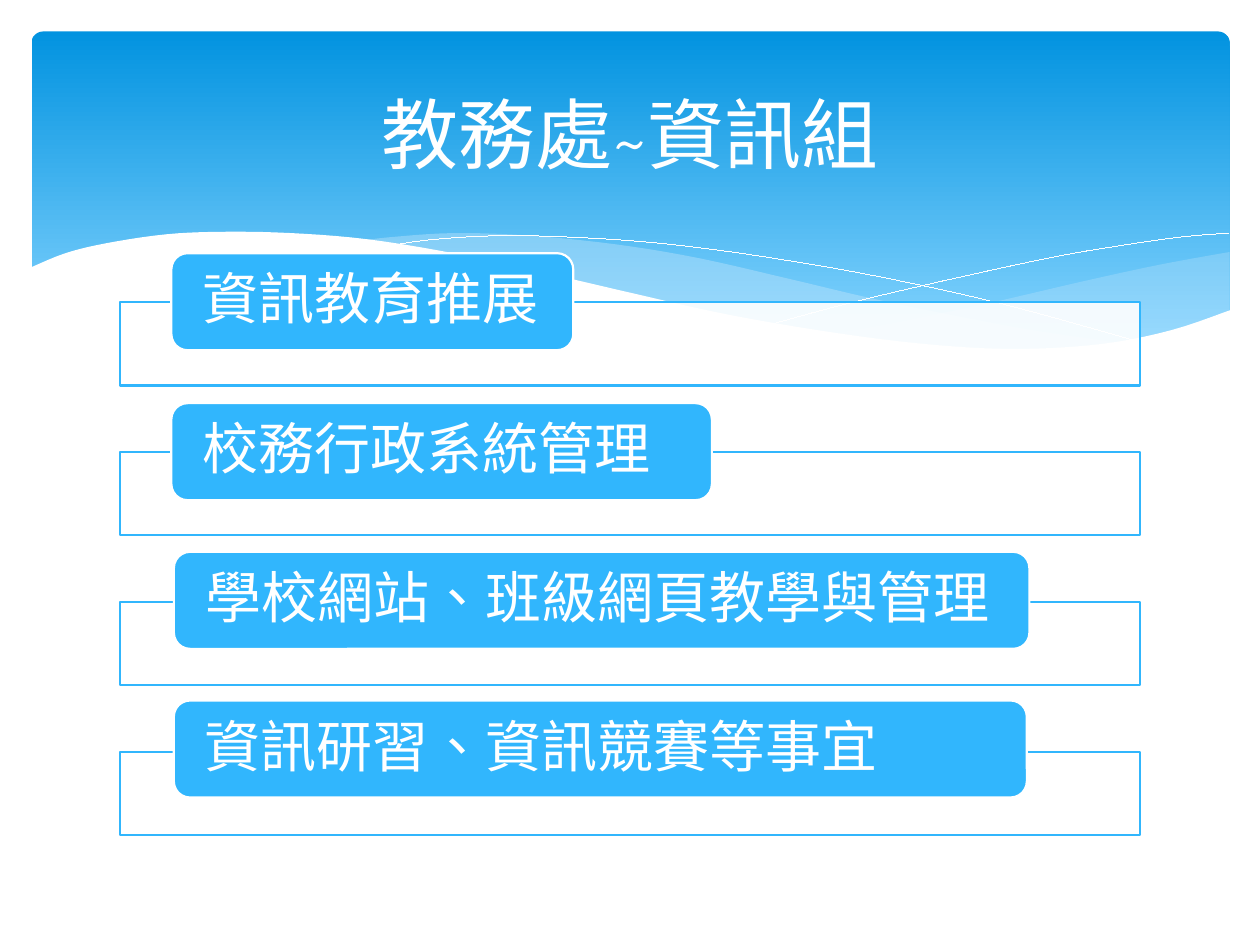
from dataclasses import dataclass

from lxml.etree import SubElement
from pptx import Presentation
from pptx.dml.color import RGBColor
from pptx.enum.lang import MSO_LANGUAGE_ID
from pptx.enum.shapes import MSO_SHAPE
from pptx.enum.text import MSO_ANCHOR, PP_ALIGN
from pptx.oxml.ns import qn
from pptx.util import Inches, Pt


@dataclass(frozen=True)
class Theme:
    font: str = "Cabin"
    white: str = "FFFFFF"
    blue: str = "31B6FD"
    pale: str = "C6E7FC"
    top: str = "0293E0"
    low: str = "83D3FE"
    title: int = 44
    item: int = 32
    hair: float = 0.01


THEME = Theme()

# Wave outlines: each side is a run of knots joined by a smooth curve.
RIGHT = [
    [(9.76, 2), (9.21, 2.1), (8.61, 2.23), (7.79, 2.42), (7.06, 2.57), (6.61, 2.65)],
    [(6.61, 2.65), (7.19, 2.72), (7.69, 2.77), (8.14, 2.78), (8.63, 2.75),
     (9.05, 2.69), (9.42, 2.59), (9.76, 2.47)],
]
MIDDLE = [
    [(8.93, 2.73), (8.07, 2.6), (7.06, 2.4), (6.29, 2.22), (5.55, 2.05),
     (4.89, 1.94), (4.2, 1.87), (3.61, 1.85), (3.13, 1.88), (2.86, 1.91)],
    [(2.86, 1.91), (3.62, 2.03), (4.49, 2.22), (5.3, 2.4), (6.01, 2.55),
     (6.65, 2.66), (7.22, 2.74), (7.73, 2.77), (8.18, 2.78), (8.57, 2.77), (8.93, 2.73)],
]
FALL = [[(3.09, 1.95), (3.44, 1.9), (4.01, 1.87), (4.69, 1.89), (5.33, 1.94),
         (6.08, 2.04), (6.95, 2.19), (7.95, 2.41), (9.07, 2.72)]]
RISE = [[(6.13, 2.57), (6.72, 2.41), (7.48, 2.23), (8.36, 2.04), (8.95, 1.94),
         (9.38, 1.88), (9.75, 1.85)]]
FRONT = [
    [(9.77, 2.46), (9.3, 2.62), (8.75, 2.73), (8.09, 2.77), (7.44, 2.74),
     (6.68, 2.65), (5.79, 2.5), (5.03, 2.33), (4.47, 2.2), (3.65, 2.02),
     (2.92, 1.9), (2.3, 1.85), (1.77, 1.84), (1.32, 1.86), (0.85, 1.93),
     (0.52, 2.01), (0.23, 2.13)],
    [(0.23, 3.29), (9.77, 3.29)],
]

# Label text, then left, top and width of its tab.
ITEMS = [
    ("資訊教育推展", 1.36, 2.01, 3.19),
    ("校務行政系統管理", 1.36, 3.2, 4.29),
    ("學校網站、班級網頁教學與管理", 1.38, 4.38, 6.79),
    ("資訊研習、資訊競賽等事宜", 1.38, 5.56, 6.77),
]


def paint(shape, fill=None, alpha=100, line=None, width=1.25):
    shape.shadow.inherit = False
    if fill:
        shape.fill.solid()
        shape.fill.fore_color.rgb = RGBColor.from_string(fill)
        if alpha < 100:
            color = shape.fill._xPr.find(qn("a:solidFill"))[0]
            SubElement(color, qn("a:alpha"), val=str(alpha * 1000))
    else:
        shape.fill.background()
    if line:
        shape.line.color.rgb = RGBColor.from_string(line)
        shape.line.width = Pt(width)
    else:
        shape.line.fill.background()


def write(shape, text, size, frame, para):
    for name, value in frame.items():
        setattr(shape.text_frame, name, value)
    first = shape.text_frame.paragraphs[0]
    for name, value in para.items():
        setattr(first, name, value)
    run = first.add_run()
    run.text = text
    run.font.color.rgb = RGBColor.from_string(THEME.white)
    font = {"name": THEME.font, "size": Pt(size),
            "language_id": MSO_LANGUAGE_ID.TRADITIONAL_CHINESE}
    for name, value in font.items():
        setattr(run.font, name, value)


def smooth(knots, steps=5):
    """Return points on a Catmull-Rom curve through the knots."""
    if len(knots) < 3:
        return knots
    ends = [knots[0], *knots, knots[-1]]
    points = [knots[0]]
    for a, b, c, d in zip(ends, ends[1:], ends[2:], ends[3:]):
        for step in range(1, steps + 1):
            t = step / steps
            points.append(tuple(
                q + t / 2 * (r - p + t * (2 * p - 5 * q + 4 * r - s
                                          + t * (3 * (q - r) + s - p)))
                for p, q, r, s in zip(a, b, c, d)))
    return points


def wave(slide, box, sides, close=True, **look):
    left, top = box[:2]
    points = [(Inches(left + x), Inches(top + y))
              for side in sides for x, y in smooth(side)]
    path = slide.shapes.build_freeform(*points[0])
    path.add_line_segments(points[1:], close=close)
    paint(path.convert_to_shape(), **look)


def banner(slide, box):
    left, top, width, height = box
    back = slide.shapes.add_shape(
        MSO_SHAPE.ROUNDED_RECTANGLE, Inches(left + 0.25), Inches(top + 0.25),
        Inches(width - 0.49), Inches(height - 0.59))
    back.adjustments[0] = 0.034
    paint(back)
    back.fill.gradient()
    back.fill.gradient_angle = 270
    stops = zip(back.fill.gradient_stops, (0, 0.9), (THEME.top, THEME.low))
    for stop, place, color in stops:
        stop.position = place
        stop.color.rgb = RGBColor.from_string(color)
    wave(slide, box, RIGHT, fill=THEME.pale, alpha=29)
    wave(slide, box, MIDDLE, fill=THEME.pale, alpha=40)
    for stroke in (FALL, RISE):
        wave(slide, box, stroke, close=False, line=THEME.white, width=THEME.hair)
    wave(slide, box, FRONT, fill=THEME.white)


def heading(slide, box, text):
    label = slide.shapes.add_textbox(*map(Inches, box))
    write(label, text, THEME.title,
          {"word_wrap": True, "vertical_anchor": MSO_ANCHOR.MIDDLE},
          {"alignment": PP_ALIGN.CENTER})


def agenda(slide, box, items, pitch=1.19):
    left, top, width, height = box
    frame = {"word_wrap": True, "vertical_anchor": MSO_ANCHOR.MIDDLE,
             "margin_left": Inches(0.21), "margin_right": Inches(0.21),
             "margin_top": 0, "margin_bottom": 0}
    para = {"alignment": PP_ALIGN.LEFT, "line_spacing": 0.9}
    for row, (text, x, y, wide) in enumerate(items):
        panel = slide.shapes.add_shape(
            MSO_SHAPE.RECTANGLE, Inches(left), Inches(top + row * pitch),
            Inches(width), Inches(height - 3 * pitch))
        paint(panel, fill=THEME.white, alpha=90, line=THEME.blue)
        tab = slide.shapes.add_shape(
            MSO_SHAPE.ROUNDED_RECTANGLE, Inches(left + x - 0.95),
            Inches(top + y - 2.4), Inches(wide), Inches(0.77))
        paint(tab, fill=THEME.blue, line=THEME.white)
        write(tab, text, THEME.item, frame, para)


def main():
    deck = Presentation()
    deck.slide_width, deck.slide_height = Inches(10), Inches(7.5)
    slide = deck.slides.add_slide(deck.slide_layouts[6])
    banner(slide, (0, 0, 10, 3.29))
    agenda(slide, (0.95, 2.4, 8.1, 4.23), ITEMS)
    heading(slide, (0.5, 0.37, 9, 1.37), "教務處~資訊組")
    deck.save("out.pptx")


if __name__ == "__main__":
    main()
